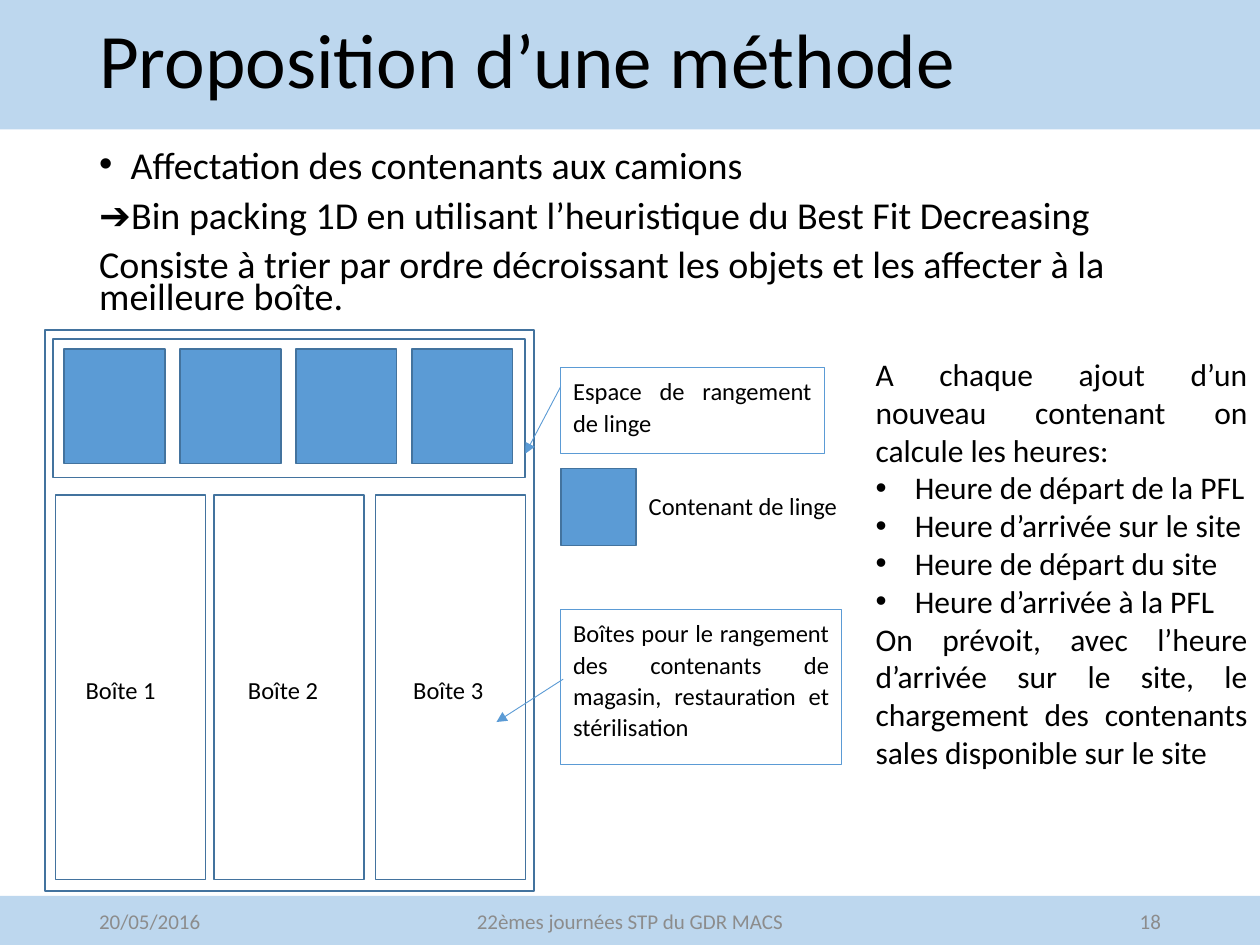
from dataclasses import dataclass
from typing import NamedTuple, Optional

from lxml.etree import SubElement
from pptx import Presentation
from pptx.dml.color import RGBColor
from pptx.enum.shapes import MSO_CONNECTOR as Connector, MSO_SHAPE as Shape
from pptx.enum.text import MSO_ANCHOR as Anchor, MSO_AUTO_SIZE as AutoSize, PP_ALIGN as Align
from pptx.oxml.ns import qn
from pptx.util import Pt


@dataclass(frozen=True)
class Theme:
    font: str = "Calibri"
    band: str = "BDD7EE"
    accent: str = "5B9BD5"
    outline: str = "43739E"
    ink: str = "000000"
    muted: str = "8C8C8C"
    title: float = 44
    body: float = 21.7
    side: float = 18
    label: float = 14
    footer: float = 12


class Box(NamedTuple):
    left: float
    top: float
    width: float
    height: float


class Line(NamedTuple):
    text: str
    indent: float = 0  # a non-zero indent makes the line a bullet


class Callout(NamedTuple):
    box: Box
    text: str
    start: tuple[float, float]
    end: tuple[float, float]


THEME = Theme()
LABEL_FORMAT = {"alignment": Align.JUSTIFY, "line_spacing": 1.07, "space_after": Pt(4)}

BANDS = [Box(0, 512, 720, 28.8), Box(0, 0, 720, 74)]
TITLE = Box(49.5, 7.2, 621, 58.3)
BODY = Box(49.5, 81.4, 621, 106.6)
SIDE = Box(493.2, 199.4, 226.8, 247)

TRUCK = Box(25.9, 188.6, 279.4, 320.4)
STORAGE = Box(30.2, 193.7, 270, 79.2)
BIN_LEFTS = (31.7, 122.4, 214.6)
BIN_LABEL_LEFTS = (41.8, 134.6, 229)
CONTAINERS = [Box(36.7 + 66.2 * i, 199.4, 57.6, 65.5) for i in range(4)]
LEGEND = Box(320.4, 267.8, 43.2, 43.9)

BODY_LINES = [
    Line("Affectation des contenants aux camions", 18),
    Line("➔Bin packing 1D en utilisant l’heuristique du Best Fit Decreasing"),
    Line("Consiste à trier par ordre décroissant les objets et les affecter à la meilleure boîte."),
]
SIDE_LINES = [
    Line("A chaque ajout d’un nouveau contenant on calcule les heures:"),
    Line("Heure de départ de la PFL", 22.5),
    Line("Heure d’arrivée sur le site", 22.5),
    Line("Heure de départ du site", 22.5),
    Line("Heure d’arrivée à la PFL", 22.5),
    Line("On prévoit, avec l’heure d’arrivée sur le site, le chargement des contenants "
         "sales disponible sur le site"),
]
FOOTERS = [
    (Box(49.5, 512, 162, 28.8), "20/05/2016", Align.LEFT),
    (Box(238.5, 512, 243, 28.8), "22èmes journées STP du GDR MACS", Align.CENTER),
    (Box(508.5, 512, 162, 28.8), "18", Align.RIGHT),
]
CALLOUTS = [
    Callout(Box(320.4, 210.2, 150.5, 49), "Espace de rangement de linge",
            (320.4, 221), (300.2, 259.2)),
    Callout(Box(320.4, 348.5, 160.6, 88.6),
            "Boîtes pour le rangement des contenants de magasin, restauration et stérilisation",
            (321.8, 388.1), (283.7, 412.6)),
]


def points(values) -> list:
    return [Pt(value) for value in values]


def rgb(color: str) -> RGBColor:
    return RGBColor.from_string(color)


def set_bullet(para, indent: float) -> None:
    """Hang a bullet by the indent, or clear the inherited one if it is zero."""
    props = para._p.get_or_add_pPr()
    props.set("marL", str(Pt(indent)))
    props.set("indent", str(-Pt(indent)))
    if indent:
        SubElement(props, qn("a:buFont"), typeface="Arial")
        SubElement(props, qn("a:buChar"), char="•")
    else:
        SubElement(props, qn("a:buNone"))


def write(shape, lines: list[Line], size: float, para_format: dict,
          anchor=Anchor.TOP, color: str = THEME.ink) -> None:
    frame = shape.text_frame
    frame_format = {"word_wrap": True, "auto_size": AutoSize.NONE, "vertical_anchor": anchor}
    for name, value in frame_format.items():
        setattr(frame, name, value)
    for i, line in enumerate(lines):
        para = frame.paragraphs[0] if i == 0 else frame.add_paragraph()
        for name, value in para_format.items():
            setattr(para, name, value)
        set_bullet(para, line.indent)
        span = para.add_run()
        span.text = line.text
        for name, value in {"name": THEME.font, "size": Pt(size)}.items():
            setattr(span.font, name, value)
        span.font.color.rgb = rgb(color)


def add_rectangle(slide, box: Box, fill: Optional[str] = None,
                  line: Optional[str] = THEME.outline, width: float = 1):
    shape = slide.shapes.add_shape(Shape.RECTANGLE, *points(box))
    shape.shadow.inherit = False
    if fill:
        shape.fill.solid()
        shape.fill.fore_color.rgb = rgb(fill)
    else:
        shape.fill.background()
    if line:
        shape.line.color.rgb = rgb(line)
        shape.line.width = Pt(width)
    else:
        shape.line.fill.background()
    return shape


def add_text(slide, box: Box, lines: list[Line], size: float, para_format: dict, **options) -> None:
    write(slide.shapes.add_textbox(*points(box)), lines, size, para_format, **options)


def add_label(slide, box: Box, text: str) -> None:
    add_text(slide, box, [Line(text)], THEME.label, LABEL_FORMAT)


def fill_placeholder(shape, box: Box, lines: list[Line], size: float, para_format: dict) -> None:
    for name, value in zip(Box._fields, points(box)):
        setattr(shape, name, value)
    write(shape, lines, size, para_format, anchor=Anchor.MIDDLE)


def add_callout(slide, callout: Callout) -> None:
    shape = add_rectangle(slide, callout.box, line=THEME.accent, width=0.5)
    write(shape, [Line(callout.text)], THEME.label, LABEL_FORMAT)
    arrow = slide.shapes.add_connector(Connector.STRAIGHT, *points(callout.start + callout.end))
    arrow.line.color.rgb = rgb(THEME.accent)
    arrow.line.width = Pt(0.5)
    SubElement(arrow.line._get_or_add_ln(), qn("a:tailEnd"), type="triangle")
    SubElement(arrow._element.spPr, qn("a:effectLst"))


def draw_truck(slide) -> None:
    add_rectangle(slide, TRUCK)
    add_rectangle(slide, STORAGE)
    for container in CONTAINERS:
        add_rectangle(slide, container, fill=THEME.accent)
    for number, (left, label_left) in enumerate(zip(BIN_LEFTS, BIN_LABEL_LEFTS), 1):
        add_rectangle(slide, Box(left, 283, 85.7, 219.6))
        add_label(slide, Box(label_left, 380.9, 58.3, 31.7), f"Boîte {number}")


def main() -> None:
    deck = Presentation()
    deck.slide_width, deck.slide_height = Pt(720), Pt(540)
    slide = deck.slides.add_slide(deck.slide_layouts[1])
    title, body = slide.placeholders

    for band in BANDS:
        shape = add_rectangle(slide, band, fill=THEME.band, line=None)
        title._element.addprevious(shape._element)
    fill_placeholder(title, TITLE, [Line("Proposition d’une méthode")], THEME.title,
                     {"alignment": Align.LEFT, "line_spacing": 0.9})
    fill_placeholder(body, BODY, BODY_LINES, THEME.body,
                     {"alignment": Align.LEFT, "line_spacing": 0.7, "space_before": Pt(10)})
    for box, text, alignment in FOOTERS:
        add_text(slide, box, [Line(text)], THEME.footer, {"alignment": alignment},
                 anchor=Anchor.MIDDLE, color=THEME.muted)

    draw_truck(slide)
    add_rectangle(slide, LEGEND, fill=THEME.accent)
    add_label(slide, Box(363.6, 275.8, 128.9, 37.4), "Contenant de linge")
    for callout in CALLOUTS:
        add_callout(slide, callout)
    add_text(slide, SIDE, SIDE_LINES, THEME.side, {"alignment": Align.JUSTIFY})
    deck.save("out.pptx")


if __name__ == "__main__":
    main()
